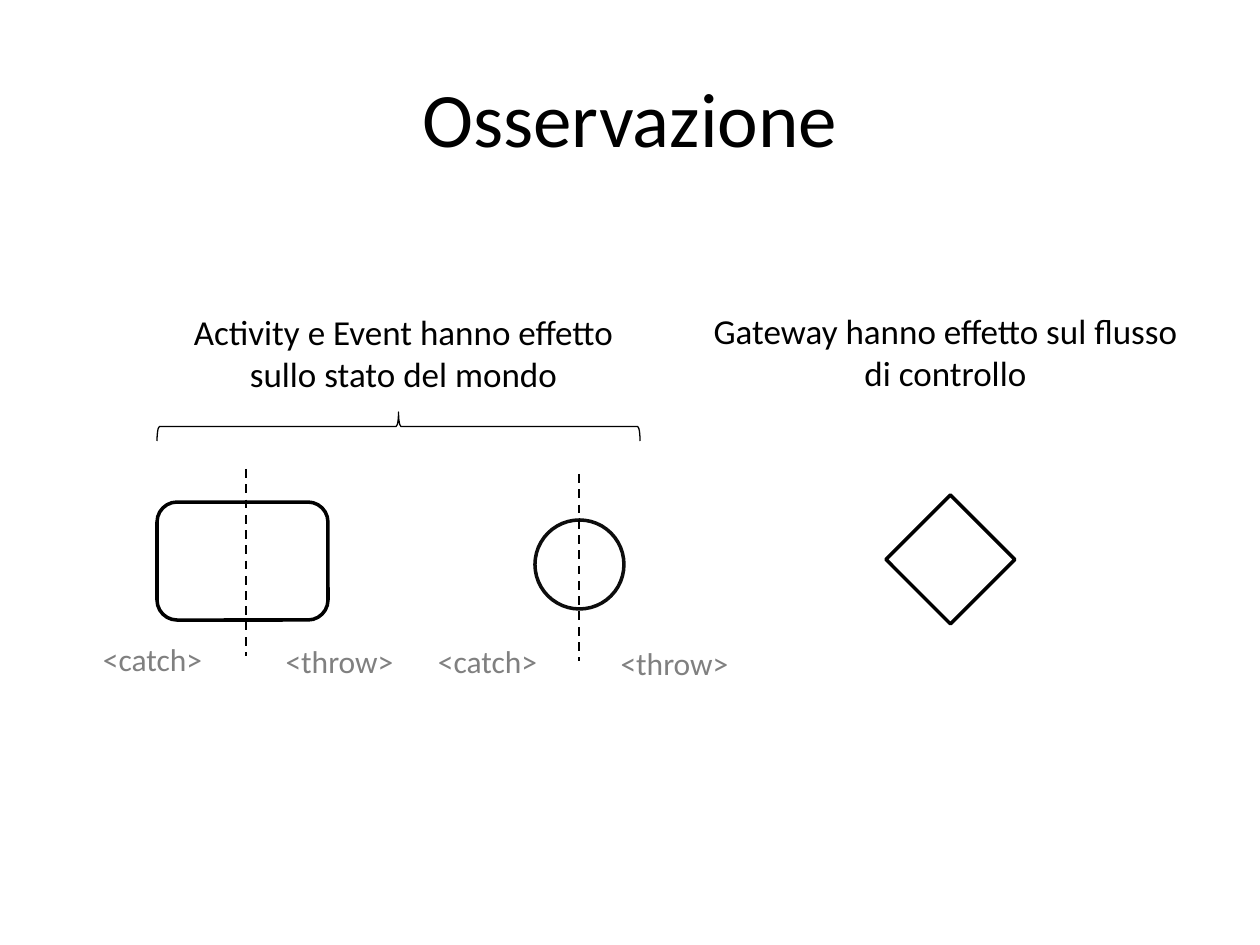
from pptx import Presentation
from pptx import util as u
from pptx.dml.color import RGBColor
from pptx.enum import dml, shapes, text
from lxml import etree

NS = "{http://schemas.openxmlformats.org/drawingml/2006/main}"
SHAPE = shapes.MSO_SHAPE


def px(n):
    return u.Inches(n / 126)


def rgb(value):
    return RGBColor.from_string(value)


class Deck:
    font = "Calibri"
    ink = "000000"
    grey = "808080"
    paper = "FFFFFF"

    def __init__(self, w, h):
        self.prs = Presentation()
        self.prs.slide_width, self.prs.slide_height = px(w), px(h)
        self.s = self.prs.slides.add_slide(self.prs.slide_layouts[6])

    def text(self, words, x, y, w, h, size, color=ink):
        tf = self.s.shapes.add_textbox(px(x), px(y), px(w), px(h)).text_frame
        tf.word_wrap = True
        tf.vertical_anchor = text.MSO_ANCHOR.MIDDLE
        p = tf.paragraphs[0]
        p.text = words
        p.alignment = text.PP_ALIGN.CENTER
        p.font.name, p.font.size = self.font, u.Pt(size)
        p.font.color.rgb = rgb(color)

    def shape(self, kind, x, y, w, h, line=ink, weight=2, fill=paper):
        sp = self.s.shapes.add_shape(kind, px(x), px(y), px(w), px(h))
        sp.shadow.inherit = False
        if fill:
            sp.fill.solid()
            sp.fill.fore_color.rgb = rgb(fill)
        else:
            sp.fill.background()
        sp.line.color.rgb = rgb(line)
        sp.line.width = u.Pt(weight)
        return sp

    def divider(self, x, y, length):
        c = self.s.shapes.add_connector(
            shapes.MSO_CONNECTOR.STRAIGHT, px(x), px(y), px(x), px(y + length))
        c.line.color.rgb = rgb(self.ink)
        c.line.width = u.Pt(1.25)
        c.line.dash_style = dml.MSO_LINE.DASH
        etree.SubElement(c._element.spPr, NS + "effectLst")


def main():
    d = Deck(1260, 945)
    d.text("Osservazione", 63, 38, 1134, 157, 44)

    d.shape(SHAPE.OVAL, 535, 520, 89, 89, line="0D0D0D")
    activity = d.shape(SHAPE.ROUNDED_RECTANGLE, 157, 502, 171, 118)
    activity.adjustments[0] = 0.17
    d.shape(SHAPE.DIAMOND, 886, 495, 129, 129)

    d.text("Activity e Event hanno effetto sullo stato del mondo",
           157, 304, 493, 97, 20)
    d.text("Gateway hanno effetto sul flusso di controllo",
           699, 303, 493, 97, 20)
    brace = d.shape(SHAPE.LEFT_BRACE, 384, 185, 29, 483, weight=0.75, fill=None)
    brace.rotation = 90

    for x, y in ((246, 469), (579, 474)):
        d.divider(x, y, 187)
    for words, x, y, w in (("<catch>", 88, 634, 129), ("<throw>", 266, 636, 147),
                           ("<catch>", 423, 636, 129), ("<throw>", 601, 638, 147)):
        d.text(words, x, y, w, 50, 18, d.grey)

    d.prs.save("out.pptx")


if __name__ == "__main__":
    main()
